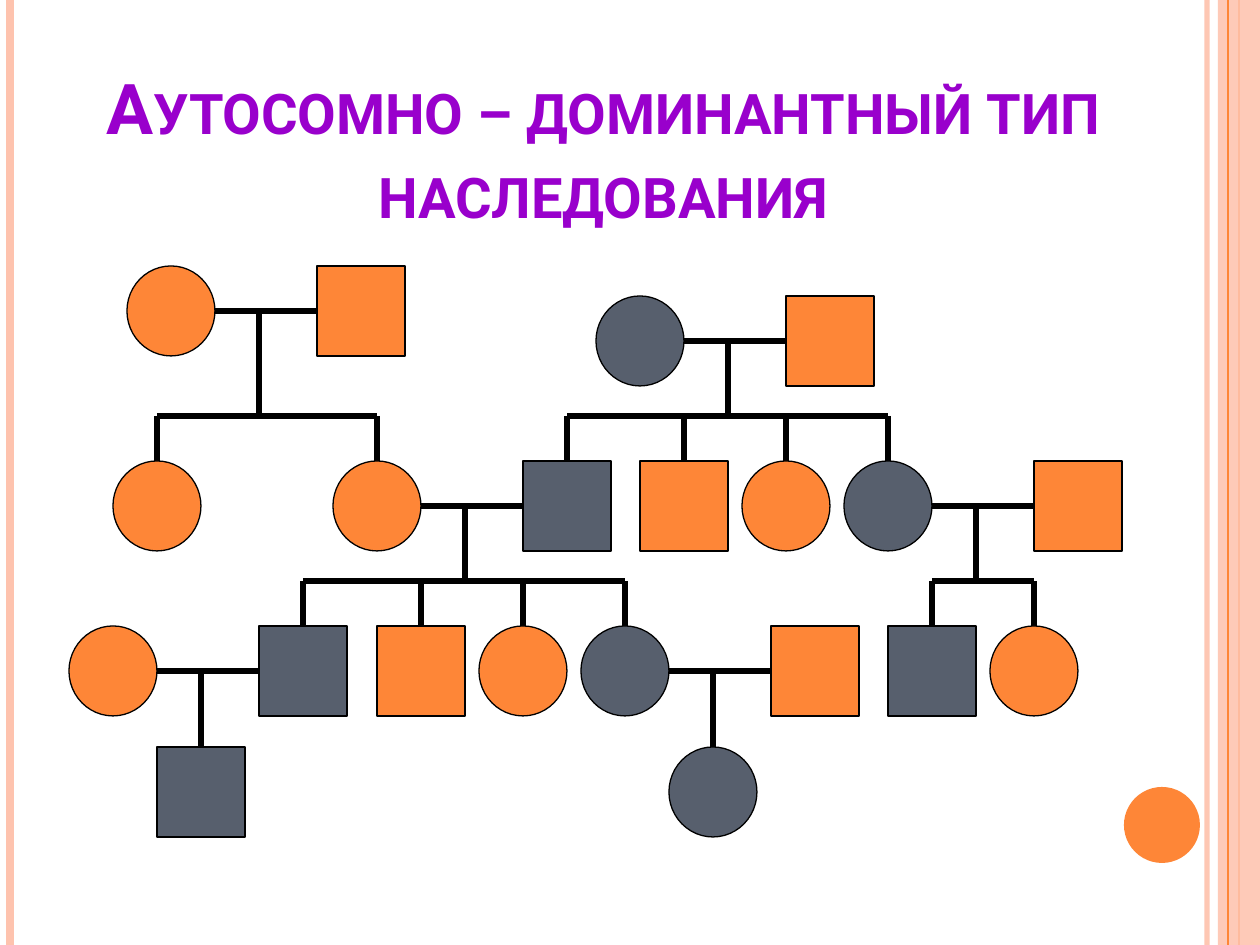
import pptx
import pptx.dml.color
import pptx.enum.shapes
import pptx.enum.text
import pptx.oxml.ns
import pptx.oxml.xmlchemy
import pptx.util

RGB = pptx.dml.color.RGBColor
ORANGE = RGB(0xFE, 0x86, 0x37)
PEACH = RGB(0xFE, 0xC3, 0xAE)
SLATE = RGB(0x57, 0x5F, 0x6D)
PURPLE = RGB(0x99, 0x00, 0xCC)
BLACK = RGB(0x00, 0x00, 0x00)

CIRCLE = pptx.enum.shapes.MSO_SHAPE.OVAL
SQUARE = pptx.enum.shapes.MSO_SHAPE.RECTANGLE

PAGE_WIDTH, PAGE_HEIGHT = 1260, 945
SYMBOL_WIDTH, SYMBOL_HEIGHT = 88, 90
PARTNER_STEP, DESCENT_STEP, STEM = 190, 132, 45

WOMAN, MAN = (CIRCLE, ORANGE), (SQUARE, ORANGE)
AFFECTED_WOMAN, AFFECTED_MAN = (CIRCLE, SLATE), (SQUARE, SLATE)

ROW_1, ROW_1_LOWER, ROW_2, ROW_3, ROW_4 = 266, 296, 461, 626, 747

PEOPLE = [
    (ROW_1, [(127, WOMAN), (317, MAN)]),
    (ROW_1_LOWER, [(596, AFFECTED_WOMAN), (786, MAN)]),
    (ROW_2, [(113, WOMAN), (333, WOMAN), (523, AFFECTED_MAN), (640, MAN),
             (742, WOMAN), (844, AFFECTED_WOMAN), (1034, MAN)]),
    (ROW_3, [(69, WOMAN), (259, AFFECTED_MAN), (377, MAN), (479, WOMAN),
             (581, AFFECTED_WOMAN), (771, MAN), (888, AFFECTED_MAN), (990, WOMAN)]),
    (ROW_4, [(157, AFFECTED_MAN), (669, AFFECTED_WOMAN)]),
]

FAMILIES = [
    (127, ROW_1, ROW_2, [113, 333]),
    (596, ROW_1_LOWER, ROW_2, [523, 640, 742, 844]),
    (333, ROW_2, ROW_3, [259, 377, 479, 581]),
    (844, ROW_2, ROW_3, [888, 990]),
    (69, ROW_3, ROW_4, [157]),
    (581, ROW_3, ROW_4, [669]),
]


def px(length):
    return pptx.util.Emu(round(length * 914400 / 126))


def apply(target, values):
    for name, value in values.items():
        setattr(target, name, value)


class Painter:
    title_font = {"name": "Roboto", "size": pptx.util.Pt(40), "bold": True}
    outline = pptx.util.Pt(0.75)

    def __init__(self, deck):
        self.page = deck.slides.add_slide(deck.slide_layouts[5])
        self.shapes = self.page.shapes

    def start_group(self):
        self.shapes = self.page.shapes.add_group_shape().shapes

    def opacity(self, shape, percent):
        for color in shape.element.spPr.iter(pptx.oxml.ns.qn("a:srgbClr")):
            alpha = pptx.oxml.xmlchemy.OxmlElement("a:alpha")
            alpha.set("val", str(percent * 1000))
            color.append(alpha)

    def title(self, text, left, top, width, height):
        box = self.page.shapes.title
        apply(box, {"left": px(left), "top": px(top),
                    "width": px(width), "height": px(height)})
        apply(box.text_frame, {
            "text": text,
            "word_wrap": True,
            "auto_size": pptx.enum.text.MSO_AUTO_SIZE.NONE,
            "vertical_anchor": pptx.enum.text.MSO_ANCHOR.BOTTOM,
        })
        para = box.text_frame.paragraphs[0]
        para.alignment = pptx.enum.text.PP_ALIGN.CENTER
        span = para.runs[0]
        apply(span.font, self.title_font)
        span.font.color.rgb = PURPLE
        span.font._element.set("cap", "small")

    def shape(self, kind, left, top, width, height, fill, line=None):
        shape = self.shapes.add_shape(kind, px(left), px(top), px(width), px(height))
        shape.shadow.inherit = False
        shape.fill.solid()
        shape.fill.fore_color.rgb = fill
        if line is None:
            shape.line.fill.background()
        else:
            shape.line.color.rgb = line
            shape.line.width = self.outline
        return shape

    def line(self, x1, y1, x2, y2, color=BLACK, points=3):
        line = self.shapes.add_connector(
            pptx.enum.shapes.MSO_CONNECTOR.STRAIGHT, px(x1), px(y1), px(x2), px(y2))
        line.line.color.rgb = color
        line.line.width = pptx.util.Pt(points)
        line._element.spPr.append(pptx.oxml.xmlchemy.OxmlElement("a:effectLst"))
        return line

    def stripe(self, x, color, points):
        return self.line(x, 0, x, PAGE_HEIGHT, color, points)

    def person(self, left, top, kind, fill):
        self.shape(kind, left, top, SYMBOL_WIDTH, SYMBOL_HEIGHT, fill, BLACK)

    def family(self, mother, row, child_row, children):
        middle = row + SYMBOL_HEIGHT // 2
        descent = mother + DESCENT_STEP
        self.line(mother + SYMBOL_WIDTH, middle, mother + PARTNER_STEP, middle)
        if len(children) == 1:
            self.line(descent, middle, descent, child_row)
            return
        bar = child_row - STEM
        centers = [child + SYMBOL_WIDTH // 2 for child in children]
        self.line(descent, middle, descent, bar)
        self.line(centers[0], bar, centers[-1], bar)
        for center in centers:
            self.line(center, bar, center, child_row)


def main():
    deck = pptx.Presentation()
    apply(deck, {"slide_width": px(PAGE_WIDTH), "slide_height": px(PAGE_HEIGHT)})
    painter = Painter(deck)

    painter.opacity(painter.stripe(1207, PEACH, 3), 93)
    painter.stripe(10, PEACH, 4.5)
    painter.stripe(1239, ORANGE, 1.5)
    painter.opacity(painter.shape(SQUARE, 1218, 0, 42, PAGE_HEIGHT, PEACH), 87)
    painter.stripe(1228, ORANGE, 0.75)
    painter.shape(CIRCLE, 1124, 787, 76, 76, ORANGE)
    painter.title("Аутосомно – доминантный тип наследования", 78, 29, 1050, 210)

    painter.start_group()
    for family in FAMILIES:
        painter.family(*family)
    for row, members in PEOPLE:
        for left, (kind, fill) in members:
            painter.person(left, row, kind, fill)

    deck.save("out.pptx")


if __name__ == "__main__":
    main()
